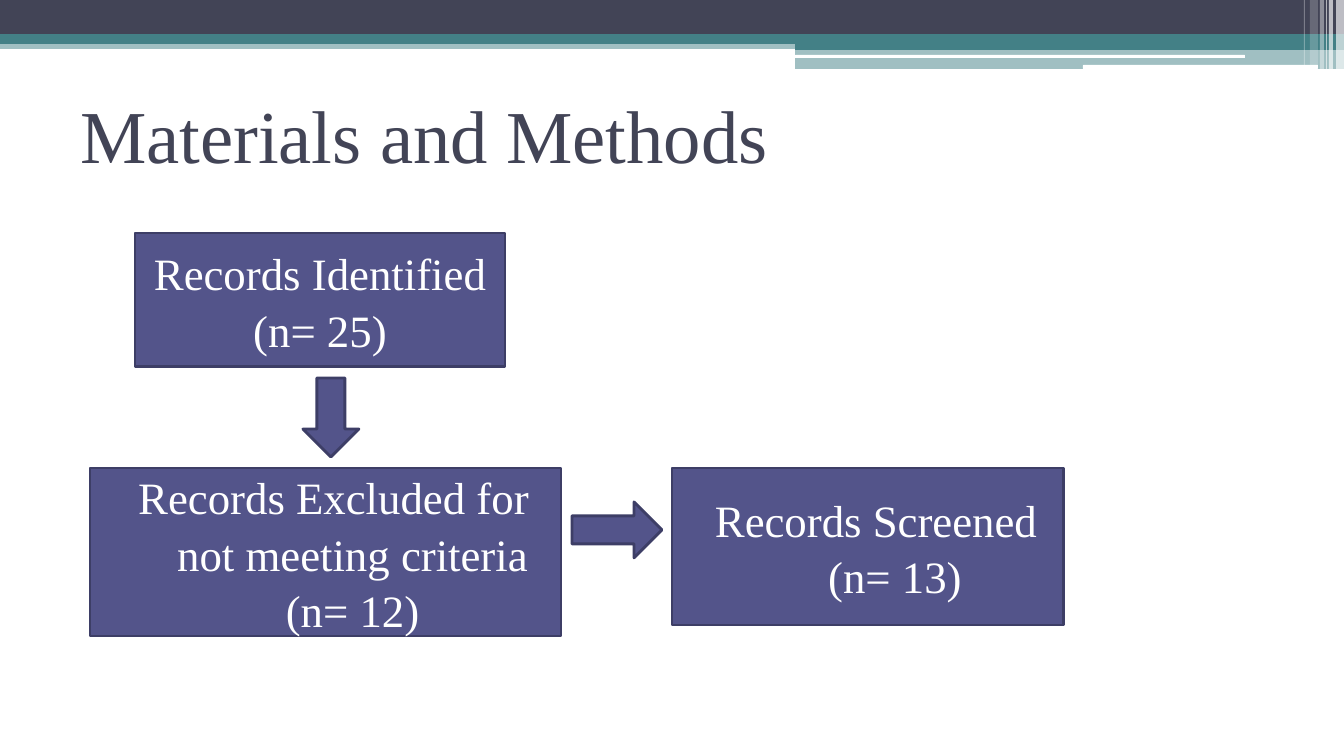
import pptx
import pptx.util
import pptx.dml.color
import pptx.enum.shapes
import pptx.enum.text
import pptx.oxml
import pptx.oxml.ns

RGBColor = pptx.dml.color.RGBColor
SHAPE = pptx.enum.shapes.MSO_SHAPE
WIDTH, HEIGHT = 1344, 756
SCALE = 914400 * 10 / WIDTH
FONT = "Times New Roman"
SLATE = RGBColor(0x42, 0x44, 0x56)
TEAL = RGBColor(0x43, 0x80, 0x86)
INDIGO = RGBColor(0x53, 0x54, 0x8A)
OUTLINE = RGBColor(0x3D, 0x3E, 0x66)
WHITE = RGBColor(0xFF, 0xFF, 0xFF)


def px(n):
    """Turn a length in px into EMU."""
    return pptx.util.Emu(round(n * SCALE))


def add_shape(s, kind, box, color, alpha=100):
    """Add a filled preset shape without line or shadow."""
    sp = s.shapes.add_shape(kind, *map(px, box))
    sp.shadow.inherit = False
    sp.fill.solid()
    sp.fill.fore_color.rgb = color
    sp.line.fill.background()
    if alpha < 100:
        clr = sp.fill._xPr.find(".//" + pptx.oxml.ns.qn("a:srgbClr"))
        clr.append(pptx.oxml.parse_xml(
            f'<a:alpha {pptx.oxml.ns.nsdecls("a")} val="{alpha * 1000}"/>'))
    return sp


def add_text(sp, lines, size, color, align, hanging=False):
    """Write one paragraph per line, centred vertically in the shape."""
    tf = sp.text_frame
    tf.word_wrap = True
    tf.vertical_anchor = pptx.enum.text.MSO_ANCHOR.MIDDLE
    for i, line in enumerate(lines):
        p = tf.add_paragraph() if i else tf.paragraphs[0]
        p.text = line
        p.alignment = align
        p.font.name = FONT
        p.font.size = pptx.util.Pt(size)
        p.font.color.rgb = color
        if size == 24:
            p.line_spacing = 1.05
        if hanging:
            p.space_before = pptx.util.Pt(3)
            pPr = p._p.get_or_add_pPr()
            pPr.set("marL", str(px(54)))
            pPr.set("indent", str(px(-38)))


def add_banner(s, x, y, w):
    """Draw the layered bars and the light stripes along the top edge."""
    split = 795
    bars = [
        (SHAPE.RECTANGLE, 0, 40, w, 9, TEAL, 50),
        (SHAPE.RECTANGLE, 0, 0, w, 34, SLATE, 100),
        (SHAPE.RECTANGLE, 0, 34, w, 10, TEAL, 100),
        (SHAPE.RECTANGLE, split, 40, w - split, 10, TEAL, 100),
        (SHAPE.RECTANGLE, split, 49, w - split, 20, TEAL, 50),
        (SHAPE.ROUNDED_RECTANGLE, split, 55, 450, 3, WHITE, 100),
        (SHAPE.ROUNDED_RECTANGLE, 1083, 65, 235, 4, WHITE, 100),
    ]
    for kind, left, top, width, height, color, alpha in bars:
        add_shape(s, kind, (x + left, y + top, width, height), color, alpha)
    stripes = [(8, 8, 69, 65), (15, 4, 69, 65), (18, 1, 69, 60),
               (24, 4, 69, 40), (34, 8, 65, 20), (40, 1, 65, 30)]
    for inset, width, height, alpha in stripes:
        add_shape(s, SHAPE.RECTANGLE, (x + w - inset, y, width, height), WHITE, alpha)


def add_title(s, box, text):
    """Add the slide title."""
    sp = s.shapes.add_textbox(*map(px, box))
    add_text(sp, [text], 40, SLATE, pptx.enum.text.PP_ALIGN.LEFT)


def add_flow(s, x, y):
    """Draw the record selection flow from its top left corner."""
    steps = [
        (SHAPE.RECTANGLE, 0, 235, 471, 168,
         ["Records Excluded for not meeting criteria (n= 12)"], True),
        (SHAPE.RECTANGLE, 45, 0, 370, 134, ["Records Identified", "(n= 25)"], False),
        (SHAPE.DOWN_ARROW, 213, 145, 56, 79, [], False),
        (SHAPE.RIGHT_ARROW, 482, 269, 90, 56, [], False),
        (SHAPE.RECTANGLE, 582, 235, 392, 157, ["Records Screened (n= 13)"], True),
    ]
    for kind, left, top, width, height, lines, hanging in steps:
        sp = add_shape(s, kind, (x + left, y + top, width, height), INDIGO)
        sp.line.color.rgb = OUTLINE
        sp.line.width = pptx.util.Pt(1.5)
        add_text(sp, lines, 24, WHITE, pptx.enum.text.PP_ALIGN.CENTER, hanging)


def main():
    """Build the slide and save it."""
    prs = pptx.Presentation()
    prs.slide_width, prs.slide_height = px(WIDTH), px(HEIGHT)
    s = prs.slides.add_slide(prs.slide_layouts[6])
    add_banner(s, 0, 0, WIDTH)
    add_title(s, (67, 75, 1210, 118), "Materials and Methods")
    add_flow(s, 90, 233)
    prs.save("out.pptx")


if __name__ == "__main__":
    main()
